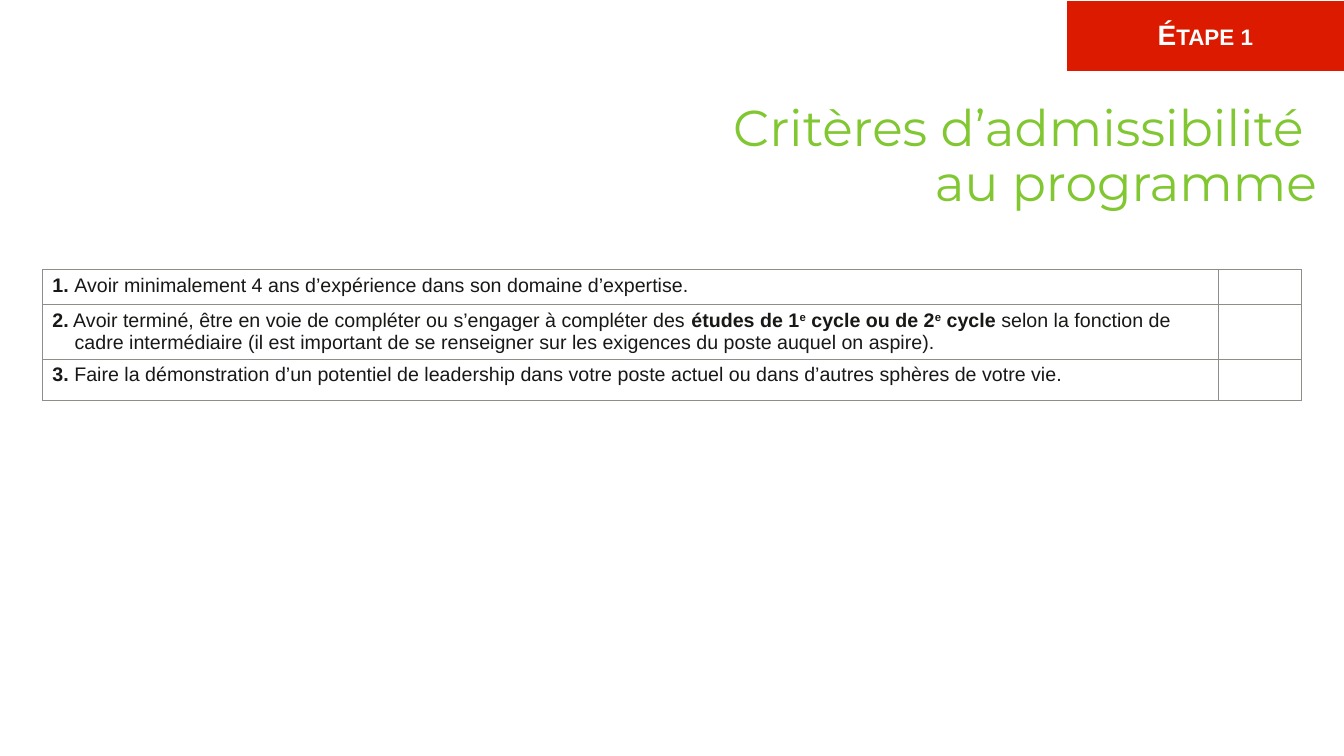
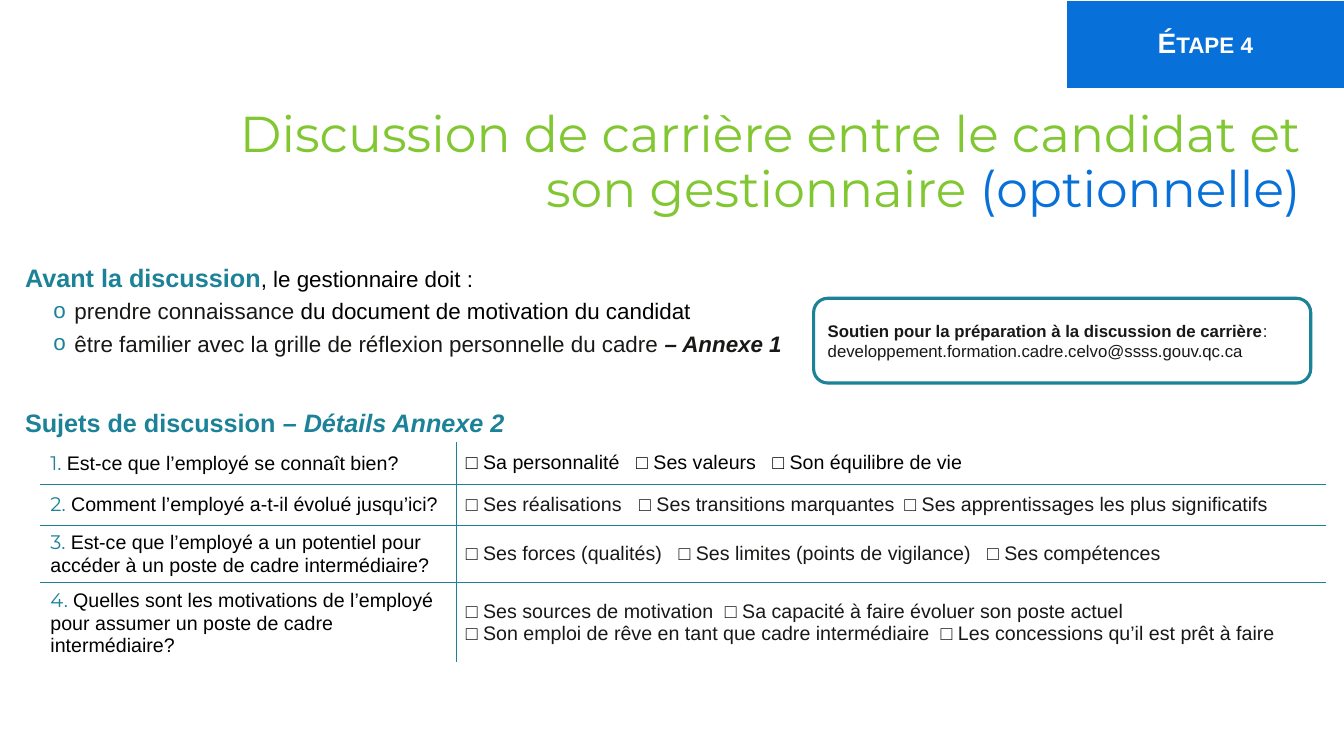
from lxml.etree import SubElement
from pptx import Presentation
from pptx.dml.color import RGBColor
from pptx.enum.shapes import MSO_SHAPE
from pptx.enum.text import MSO_ANCHOR, MSO_AUTO_SIZE, PP_ALIGN
from pptx.oxml.ns import qn
from pptx.util import Inches, Pt

WHITE, BLACK, INK = "FFFFFF", "000000", "181817"
GREEN, TEAL, RED, BLUE, GREY = "81C731", "1B8298", "DB1A00", "0871D9", "8E8E89"
BODY_FONT, TITLE_FONT = "Arial", "Montserrat"
BADGE_LEFT, BADGE_WIDTH = 10.57, 2.77

CRITERIA = [
    [("1. ", {"bold": True}),
     ("Avoir minimalement 4 ans d’expérience dans son domaine d’expertise.", {})],
    [("2.", {"bold": True}),
     (" Avoir terminé, être en voie de compléter ou s’engager à compléter des ", {}),
     ("études de 1", {"bold": True}),
     ("e", {"bold": True, "superscript": True}),
     (" cycle ou de 2", {"bold": True}),
     ("e", {"bold": True, "superscript": True}),
     (" cycle ", {"bold": True}),
     ("selon la fonction de cadre intermédiaire (il est important de se renseigner "
      "sur les exigences du poste auquel on aspire).", {})],
    [("3. ", {"bold": True}),
     ("Faire la démonstration d’un potentiel de leadership dans votre poste actuel "
      "ou dans d’autres sphères de votre vie.", {})],
]

TOPICS = [
    ("Est-ce que l’employé se connaît bien?",
     [(["Sa personnalité", "Ses valeurs", "Son équilibre de vie"], [1.69, 3.04])], BLACK),
    ("Comment l’employé a-t-il évolué jusqu’ici?",
     [(["Ses réalisations", "Ses transitions marquantes",
        "Ses apprentissages les plus significatifs"], [1.72, 4.35])], INK),
    ("Est-ce que l’employé a un potentiel pour accéder à un poste de cadre intermédiaire?",
     [(["Ses forces (qualités)", "Ses limites (points de vigilance)",
        "Ses compétences"], [2.11, 5.17])], INK),
    ("Quelles sont les motivations de l’employé pour assumer un poste de cadre intermédiaire?",
     [(["Ses sources de motivation", "Sa capacité à faire évoluer son poste actuel"], [2.57]),
      (["Son emploi de rêve en tant que cadre intermédiaire",
        "Les concessions qu’il est prêt à faire"], [4.71])], INK),
]


def color(value):
    """Turn a hex string into a colour."""
    return RGBColor.from_string(value)


def add_run(paragraph, text, size, hex_color=INK, font=BODY_FONT, bold=False,
            italic=False, superscript=False, small_caps=False):
    """Add one formatted run to a paragraph."""
    run = paragraph.add_run()
    run.text = text
    run.font.size, run.font.name = Pt(size), font
    run.font.bold, run.font.italic = bold, italic
    run.font.color.rgb = color(hex_color)
    properties = run.font._element
    if superscript:
        properties.set("baseline", "30000")
    if small_caps:
        properties.set("cap", "small")


def set_hanging(paragraph, left, first):
    """Give a paragraph a left margin and a first-line indent."""
    properties = paragraph._p.get_or_add_pPr()
    properties.set("marL", str(Inches(left)))
    properties.set("indent", str(Inches(first)))
    return properties


def add_bullet(paragraph, character, hex_color):
    """Give a paragraph a coloured hanging bullet."""
    properties = set_hanging(paragraph, 0.49, -0.21)
    bullet_color = SubElement(properties, qn("a:buClr"))
    SubElement(bullet_color, qn("a:srgbClr")).set("val", hex_color)
    SubElement(properties, qn("a:buFont")).set("typeface", BODY_FONT)
    SubElement(properties, qn("a:buChar")).set("char", character)


def add_tab_stops(paragraph, stops):
    """Set the left tab stops of a paragraph."""
    tab_list = SubElement(paragraph._p.get_or_add_pPr(), qn("a:tabLst"))
    for stop in stops:
        tab = SubElement(tab_list, qn("a:tab"))
        tab.set("pos", str(Inches(stop)))
        tab.set("algn", "l")


def set_borders(cell, borders):
    """Draw the given sides of a cell, each as (colour, width)."""
    properties = cell._tc.get_or_add_tcPr()
    for index, side in enumerate("LRTB"):
        hex_color, width = borders[side]
        line = SubElement(properties, qn(f"a:ln{side}"))
        line.set("w", str(Pt(width)))
        fill = SubElement(line, qn("a:solidFill"))
        SubElement(fill, qn("a:srgbClr")).set("val", hex_color)
        properties.insert(index, line)


def add_box(slide, box, preset=MSO_SHAPE.RECTANGLE, fill=None, line=None, line_width=1.5):
    """Add a flat shape and return it with left-aligned text."""
    shape = slide.shapes.add_shape(preset, *map(Inches, box))
    shape.shadow.inherit = False
    if fill:
        shape.fill.solid()
        shape.fill.fore_color.rgb = color(fill)
    else:
        shape.fill.background()
    if line:
        shape.line.color.rgb = color(line)
        shape.line.width = Pt(line_width)
    else:
        shape.line.fill.background()
    shape.text_frame.word_wrap = True
    shape.text_frame.vertical_anchor = MSO_ANCHOR.TOP
    shape.text_frame.paragraphs[0].alignment = PP_ALIGN.LEFT
    return shape


def next_paragraph(frame, index):
    """Return the first paragraph or add a left-aligned one."""
    paragraph = frame.add_paragraph() if index else frame.paragraphs[0]
    paragraph.alignment = PP_ALIGN.LEFT
    return paragraph


def add_title(slide, box, lines):
    """Place the title; each line is a list of (text, colour)."""
    title = slide.shapes.title
    title.left, title.top, title.width, title.height = map(Inches, box)
    frame = title.text_frame
    frame.word_wrap, frame.auto_size = True, MSO_AUTO_SIZE.NONE
    frame.vertical_anchor = MSO_ANCHOR.MIDDLE
    paragraph = frame.paragraphs[0]
    paragraph.alignment, paragraph.line_spacing = PP_ALIGN.RIGHT, 0.9
    for index, line in enumerate(lines):
        if index:
            paragraph.add_line_break()
        for text, hex_color in line:
            add_run(paragraph, text, 36, hex_color, TITLE_FONT)


def add_step_badge(slide, text, fill, height):
    """Place the coloured step label in the top right corner."""
    badge = add_box(slide, (BADGE_LEFT, 0, BADGE_WIDTH, height), fill=fill, line=WHITE)
    badge.text_frame.vertical_anchor = MSO_ANCHOR.MIDDLE
    paragraph = badge.text_frame.paragraphs[0]
    paragraph.alignment, paragraph.line_spacing = PP_ALIGN.CENTER, 0.9
    add_run(paragraph, text, 20, WHITE, bold=True, small_caps=True)


def add_plain_table(slide, left, top, widths, heights):
    """Add a white table without banding."""
    box = (left, top, sum(widths), sum(heights))
    table = slide.shapes.add_table(len(heights), len(widths), *map(Inches, box)).table
    table.first_row = table.horz_banding = False
    for column, width in zip(table.columns, widths):
        column.width = Inches(width)
    for row, height in zip(table.rows, heights):
        row.height = Inches(height)
    for cell in table.iter_cells():
        cell.fill.solid()
        cell.fill.fore_color.rgb = color(WHITE)
    return table


def add_criteria_table(slide, left, top):
    """Place the admission criteria with an empty column to tick."""
    table = add_plain_table(slide, left, top, [11.66, 0.83], [0.35, 0.54, 0.41])
    for cell in table.iter_cells():
        set_borders(cell, dict.fromkeys("LRTB", (GREY, 0.5)))
    for row, runs in enumerate(CRITERIA):
        paragraph = table.cell(row, 0).text_frame.paragraphs[0]
        set_hanging(paragraph, 0.22, -0.22)
        for text, style in runs:
            add_run(paragraph, text, 14, **style)
        empty_paragraph = table.cell(row, 1).text_frame.paragraphs[0]
        SubElement(empty_paragraph._p, qn("a:endParaRPr")).set("sz", "1400")


def add_preparation(slide, box):
    """Place what the manager does before the discussion."""
    frame = add_box(slide, box, fill=WHITE).text_frame
    heading = frame.paragraphs[0]
    add_run(heading, "Avant la discussion", 18, TEAL, bold=True)
    add_run(heading, ", le gestionnaire doit :", 16, BLACK)
    tasks = [
        [("prendre connaissance ", {}),
         ("du document de motivation du candidat", {"hex_color": BLACK})],
        [("être familier avec la grille de réflexion personnelle du cadre ", {}),
         ("– Annexe 1", {"bold": True, "italic": True})],
    ]
    for index, runs in enumerate(tasks, 1):
        paragraph = next_paragraph(frame, index)
        paragraph.line_spacing = 1.2
        add_bullet(paragraph, "o", TEAL)
        for text, style in runs:
            add_run(paragraph, text, 16, **style)


def add_topics_heading(slide, box):
    """Place the heading above the discussion topics."""
    paragraph = add_box(slide, box, fill=WHITE).text_frame.paragraphs[0]
    add_run(paragraph, "Sujets de discussion ", 18, TEAL, bold=True)
    add_run(paragraph, "– Détails Annexe 2", 18, TEAL, bold=True, italic=True)


def add_support_box(slide, box):
    """Place the rounded box with the support address."""
    shape = add_box(slide, box, MSO_SHAPE.ROUNDED_RECTANGLE, line=TEAL, line_width=2.25)
    frame = shape.text_frame
    frame.vertical_anchor = MSO_ANCHOR.MIDDLE
    label = next_paragraph(frame, 0)
    add_run(label, "Soutien pour la préparation à la discussion de carrière", 12, bold=True)
    add_run(label, ":", 12)
    add_run(next_paragraph(frame, 1),
            "developpement.formation.cadre.celvo@ssss.gouv.qc.ca", 12)


def add_topics_table(slide, left, top):
    """Place the numbered questions and their checklists."""
    table = add_plain_table(slide, left, top, [4.12, 8.63], [0.41, 0.41, 0.57, 0.79])
    inner, outer = (TEAL, 0.25), (WHITE, 1)
    last = len(TOPICS) - 1
    for row, (question, checklist, hex_color) in enumerate(TOPICS):
        for column in range(2):
            cell = table.cell(row, column)
            cell.vertical_anchor = MSO_ANCHOR.MIDDLE
            set_borders(cell, {"L": inner if column else outer,
                               "R": outer if column else inner,
                               "T": inner if row else outer,
                               "B": inner if row < last else outer})
        paragraph = table.cell(row, 0).text_frame.paragraphs[0]
        add_run(paragraph, f"{row + 1}. ", 14, TEAL, TITLE_FONT)
        add_run(paragraph, question, 14, BLACK)
        for index, (items, stops) in enumerate(checklist):
            paragraph = next_paragraph(table.cell(row, 1).text_frame, index)
            add_tab_stops(paragraph, stops)
            add_run(paragraph, "\t".join(f"□ {item}" for item in items), 14, hex_color)


def build_criteria_slide(slide):
    """Build the slide on admission criteria."""
    add_title(slide, (2.14, 0.84, 11.02, 1.45),
              [[("Critères d’admissibilité ", GREEN)], [("au programme", GREEN)]])
    add_criteria_table(slide, 0.42, 2.67)
    add_step_badge(slide, "Étape 1", RED, 0.72)


def build_discussion_slide(slide):
    """Build the slide on the career discussion."""
    add_title(slide, (1.98, 0.9, 11.02, 1.45),
              [[("Discussion de carrière entre le candidat et son gestionnaire ", GREEN),
                ("(optionnelle)", BLUE)]])
    add_preparation(slide, (0.15, 2.55, 9.18, 1.05))
    add_topics_heading(slide, (0.15, 3.99, 12.22, 0.4))
    add_support_box(slide, (8.07, 2.96, 4.93, 0.84))
    add_topics_table(slide, 0.4, 4.39)
    add_step_badge(slide, "Étape 4", BLUE, 0.88)


def main():
    """Build and save the presentation."""
    presentation = Presentation()
    presentation.slide_width, presentation.slide_height = Inches(13.33), Inches(7.5)
    for build in (build_criteria_slide, build_discussion_slide):
        build(presentation.slides.add_slide(presentation.slide_layouts[5]))
    presentation.save("out.pptx")


if __name__ == "__main__":
    main()
